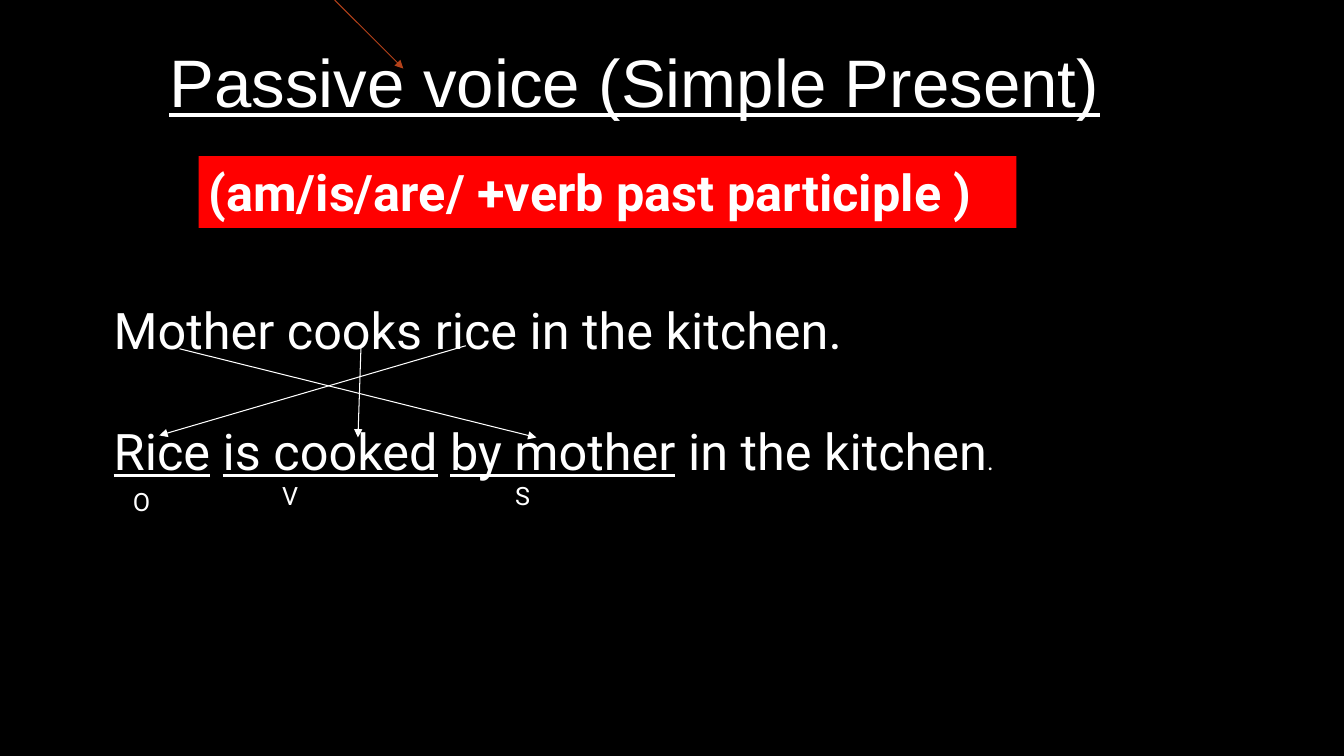
from pptx import Presentation
from pptx.dml.color import RGBColor
from pptx.enum.shapes import MSO_CONNECTOR, MSO_SHAPE
from pptx.enum.text import MSO_ANCHOR, MSO_AUTO_SIZE, PP_ALIGN
from pptx.oxml.ns import qn
from pptx.util import Inches, Pt
from lxml.etree import SubElement

COLORS = {"black": "000000", "white": "FFFFFF", "red": "FF0000", "rust": "B4421A"}


def add_run(p, text, size, font="Roboto", bold=False, underline=False):
    r = p.add_run()
    r.text = text
    r.font.name = font
    r.font.size = Pt(size)
    r.font.bold = bold
    r.font.underline = underline
    r.font.color.rgb = RGBColor.from_string(COLORS["white"])


def set_frame(sp):
    tf = sp.text_frame
    tf.word_wrap = True
    tf.auto_size = MSO_AUTO_SIZE.NONE
    tf.vertical_anchor = MSO_ANCHOR.TOP
    tf.paragraphs[0].alignment = PP_ALIGN.LEFT
    return tf


prs = Presentation()
prs.slide_width, prs.slide_height = Inches(13.33), Inches(7.5)
s = prs.slides.add_slide(prs.slide_layouts[5])
s.background.fill.solid()
s.background.fill.fore_color.rgb = RGBColor.from_string(COLORS["black"])

title = s.shapes.title
title.left, title.top = Inches(1.58), Inches(0.35)
title.width, title.height = Inches(10.03), Inches(0.91)
tf = set_frame(title)
add_run(tf.paragraphs[0], "Passive voice (Simple Present)", 48, "Arial", underline=True)

formula = s.shapes.add_shape(
    MSO_SHAPE.RECTANGLE, Inches(1.97), Inches(1.55), Inches(8.11), Inches(0.71))
formula.shadow.inherit = False
formula.fill.solid()
formula.fill.fore_color.rgb = RGBColor.from_string(COLORS["red"])
formula.line.fill.background()
tf = set_frame(formula)
add_run(tf.paragraphs[0], "(am/is/are/ +verb past participle )", 36, bold=True)

sentences = s.shapes.add_textbox(Inches(1.03), Inches(2.92), Inches(9.97), Inches(1.92))
tf = set_frame(sentences)
add_run(tf.paragraphs[0], "Mother cooks rice in the kitchen.", 36)
passive = tf.add_paragraph()
passive.space_before = Pt(43)
for text, size, underline in [
    ("Rice", 36, True), (" ", 36, False), ("is cooked", 36, True), (" ", 36, False),
    ("by mother", 36, True), (" in the kitchen", 36, False), (".", 18, False),
]:
    add_run(passive, text, size, underline=underline)

for x1, y1, x2, y2, color in [
    (3.32, 0, 4, 0.68, "rust"),
    (4.62, 3.43, 1.58, 4.32, "white"),
    (3.58, 3.45, 3.55, 4.34, "white"),
    (1.78, 3.46, 5.32, 4.34, "white"),
]:
    arrow = s.shapes.add_connector(
        MSO_CONNECTOR.STRAIGHT, Inches(x1), Inches(y1), Inches(x2), Inches(y2))
    arrow.line.color.rgb = RGBColor.from_string(COLORS[color])
    arrow.line.width = Pt(0.75)
    SubElement(arrow.line._get_or_add_ln(), qn("a:tailEnd"), type="triangle")
    SubElement(arrow._element.spPr, qn("a:effectLst"))

for letter, x, y, width in [("O", 1.22, 4.78, 0.75), ("V", 2.7, 4.72, 0.61), ("S", 5.01, 4.72, 0.63)]:
    label = s.shapes.add_textbox(Inches(x), Inches(y), Inches(width), Inches(0.4))
    tf = set_frame(label)
    add_run(tf.paragraphs[0], letter, 18)

prs.save("out.pptx")
